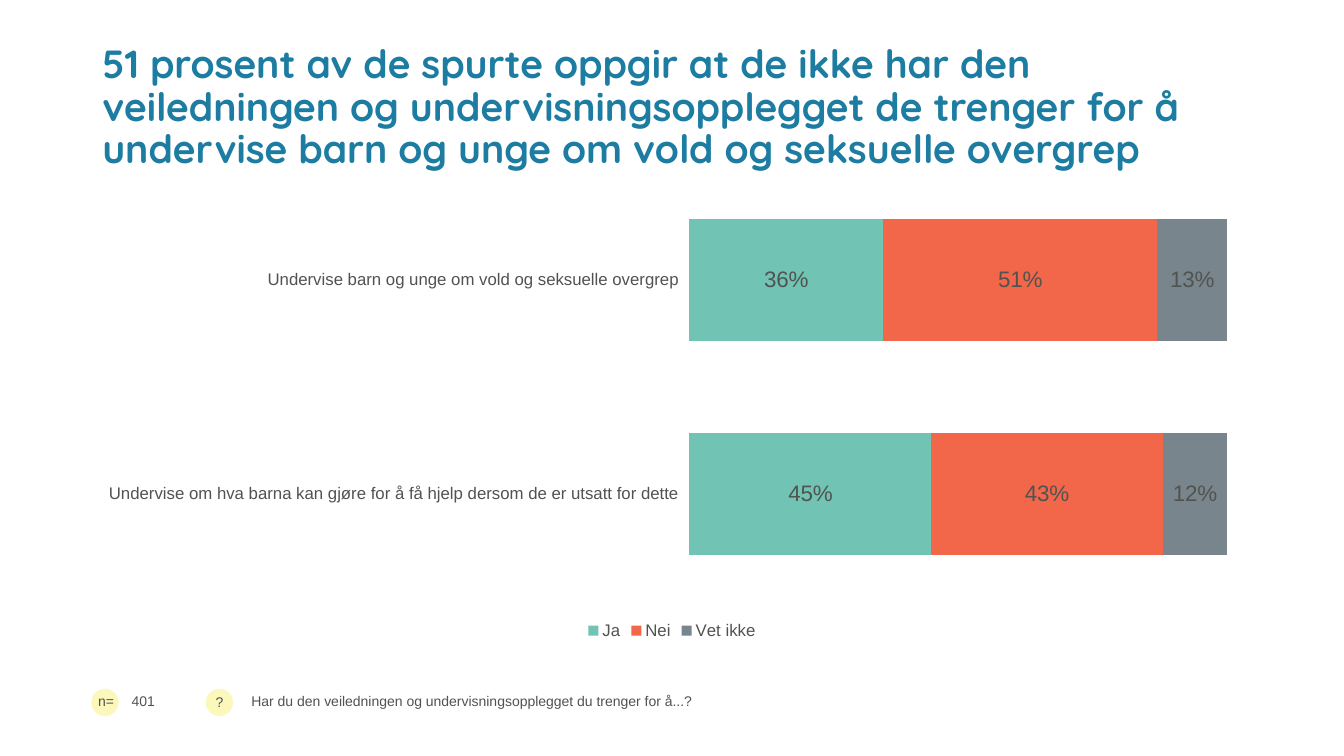
from lxml import etree
from pptx import Presentation
from pptx.chart.data import CategoryChartData
from pptx.dml.color import RGBColor
from pptx.enum.chart import XL_CHART_TYPE, XL_LEGEND_POSITION, XL_TICK_LABEL_POSITION, XL_TICK_MARK
from pptx.enum.shapes import MSO_SHAPE
from pptx.enum.text import MSO_ANCHOR
from pptx.oxml.ns import qn
from pptx.util import Pt

EMU_PER_PX = 9525
STACKED_BARS = XL_CHART_TYPE.BAR_STACKED_100
LEGEND_BOTTOM = XL_LEGEND_POSITION.BOTTOM
LABELS_LOW = XL_TICK_LABEL_POSITION.LOW
NO_TICK = XL_TICK_MARK.NONE
OVAL = MSO_SHAPE.OVAL
TOP, MIDDLE = MSO_ANCHOR.TOP, MSO_ANCHOR.MIDDLE

COLORS = {
    "title": "1C7CA1",
    "text": "515350",
    "badge": "FCF7BA",
    "Ja": "71C3B3",
    "Nei": "F26649",
    "Vet ikke": "79858D",
}
ANSWERS = {"Ja": (0.36, 0.45), "Nei": (0.51, 0.43), "Vet ikke": (0.13, 0.12)}
TOPICS = (
    "Undervise barn og unge om vold og seksuelle overgrep",
    "Undervise om hva barna kan gjøre for å få hjelp dersom de er utsatt for dette",
)
TITLE = (
    "51 prosent av de spurte oppgir at de ikke har den veiledningen og "
    "undervisningsopplegget de trenger for å undervise barn og unge om vold "
    "og seksuelle overgrep"
)
QUESTION = "Har du den veiledningen og undervisningsopplegget du trenger for å...?"
PLOT_LAYOUT = {"x": 0.515, "y": 0.02, "w": 0.464, "h": 0.89}
FOOTER_TOP, FOOTER_HEIGHT = 656, 26


def px(*lengths):
    return [length * EMU_PER_PX for length in lengths]


def color(name):
    return RGBColor.from_string(COLORS[name])


def set_font(font, size, name="Arial", fill="text", bold=False):
    font.size = Pt(size)
    font.name = name
    font.bold = bold
    font.color.rgb = color(fill)


def place_plot(chart, layout):
    """Fix the inner plot area at fractions of the chart frame."""
    area = chart.plots[0]._element.getparent()
    for old in area.findall(qn("c:layout")):
        area.remove(old)
    holder = etree.Element(qn("c:layout"))
    manual = etree.SubElement(holder, qn("c:manualLayout"))
    settings = {"layoutTarget": "inner", "xMode": "edge", "yMode": "edge", **layout}
    for tag, value in settings.items():
        etree.SubElement(manual, qn(f"c:{tag}")).set("val", str(value))
    area.insert(0, holder)


class SurveySlide:
    def __init__(self, deck):
        self.page = deck.slides.add_slide(deck.slide_layouts[6])

    def text(self, words, frame, size=10, anchor=TOP, spacing=1.0, **font_format):
        box = self.page.shapes.add_textbox(*px(*frame)).text_frame
        box.word_wrap = True
        box.vertical_anchor = anchor
        para = box.paragraphs[0]
        para.line_spacing = spacing
        span = para.add_run()
        span.text = words
        set_font(span.font, size, **font_format)

    def badge(self, left):
        frame = px(left, FOOTER_TOP, FOOTER_HEIGHT, FOOTER_HEIGHT)
        circle = self.page.shapes.add_shape(OVAL, *frame)
        circle.shadow.inherit = False
        circle.fill.solid()
        circle.fill.fore_color.rgb = color("badge")
        circle.line.fill.background()

    def bar_chart(self, frame):
        data = CategoryChartData(number_format="0%")
        data.categories = TOPICS
        for answer, shares in ANSWERS.items():
            data.add_series(answer, shares)
        chart = self.page.shapes.add_chart(STACKED_BARS, *px(*frame), data).chart
        chart.has_title = False
        set_font(chart.font, 18)
        chart.has_legend = True
        chart.legend.position = LEGEND_BOTTOM
        chart.legend.include_in_layout = False
        set_font(chart.legend.font, 12)

        topic_axis = chart.category_axis
        topic_axis.reverse_order = True
        topic_axis.major_tick_mark = topic_axis.minor_tick_mark = NO_TICK
        topic_axis.tick_label_position = LABELS_LOW
        topic_axis.format.line.fill.background()
        set_font(topic_axis.tick_labels.font, 12)
        share_axis = chart.value_axis
        share_axis.visible = False
        share_axis.has_major_gridlines = False
        share_axis.minimum_scale, share_axis.maximum_scale = 0, 1

        plot = chart.plots[0]
        plot.gap_width, plot.overlap = 75, 100
        plot.vary_by_categories = False
        for series in plot.series:
            series.format.fill.solid()
            series.format.fill.fore_color.rgb = color(series.name)
            labels = series.data_labels
            labels.show_value = True
            labels.number_format = "0%"
            labels.number_format_is_linked = False
            set_font(labels.font, 16)
        place_plot(chart, PLOT_LAYOUT)


def main():
    deck = Presentation()
    deck.slide_width, deck.slide_height = px(1280, 720)
    survey = SurveySlide(deck)
    for left in (196, 87):
        survey.badge(left)
    survey.text("n=", (84, FOOTER_TOP - 1, 43, FOOTER_HEIGHT))
    survey.text("?", (196, FOOTER_TOP, 24, FOOTER_HEIGHT))
    survey.text(TITLE, (88, 38, 1104, 135), size=28, spacing=0.9,
                name="Quicksand", fill="title", bold=True)
    survey.bar_chart((88, 156, 1104, 457))
    for words, left, width in ((QUESTION, 230, 951), ("401", 116, 71)):
        survey.text(words, (left, FOOTER_TOP, width, FOOTER_HEIGHT),
                    anchor=MIDDLE, spacing=0.9)
    deck.save("out.pptx")


if __name__ == "__main__":
    main()
